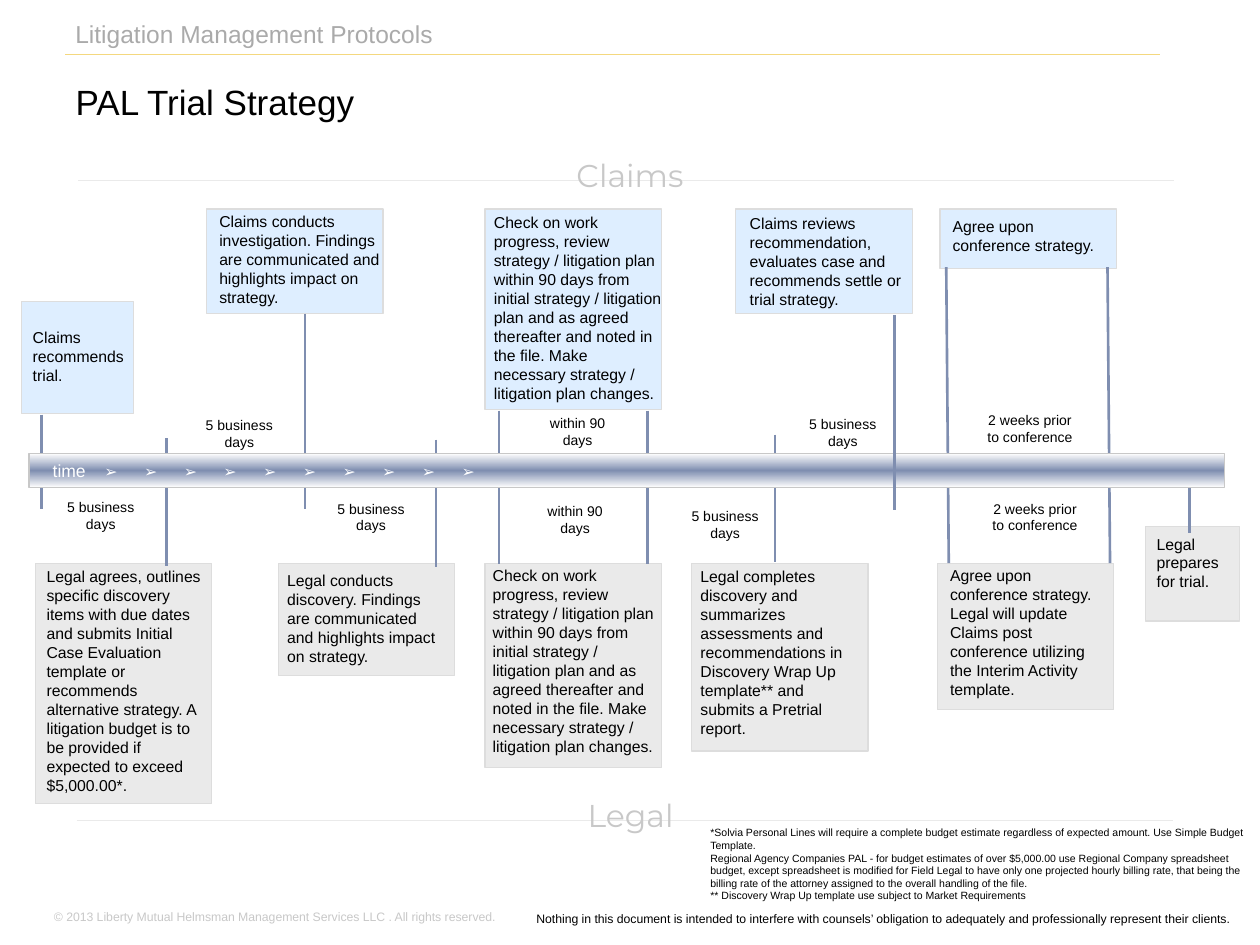
"""Build the PAL Trial Strategy timeline slide."""
from copy import deepcopy

from lxml.etree import SubElement
from pptx import Presentation
from pptx.dml.color import RGBColor
from pptx.enum.shapes import MSO_CONNECTOR, MSO_SHAPE
from pptx.enum.text import MSO_ANCHOR, PP_ALIGN
from pptx.oxml.ns import qn
from pptx.util import Inches, Pt

THEME = {
    "font": "Arial", "lane_font": "Montserrat",
    "black": "000000", "white": "FFFFFF", "header": "AAAAAA", "muted": "C8C8C8",
    "claims": "D1E8FF", "legal": "EAEAEA", "outline": "DDDDDD",
    "rule": "EAEAEA", "header_rule": "F4D87F", "time": "7F8EB0",
    "title_size": 20, "lane_size": 18, "header_size": 14, "time_size": 10,
    "card_size": 9, "label_size": 8, "footer_size": 7, "note_size": 6,
    "thin": 0.75, "thick": 1.5,
}
CARD_WIDTH, CLAIMS_TOP, LEGAL_TOP = 1.4, 1.66, 4.47

PROGRESS = ("Check on work progress, review strategy / litigation plan within 90 days from "
            "initial strategy / litigation plan and as agreed thereafter and noted in the file. "
            "Make necessary strategy / litigation plan changes.")
FINDINGS = "Findings are communicated and highlights impact on strategy."

# (lane, card left, top, width, height, text left, top, width, height, text)
CARDS = [
    ("claims", (0.17, 2.39, 0.89, 0.89), (0.26, 2.6, 0.78, 0.45), "Claims recommends trial."),
    ("legal", (0.28, LEGAL_TOP, CARD_WIDTH, 1.91), (0.37, 4.5, 1.26, 1.49),
     "Legal agrees, outlines specific discovery items with due dates and submits Initial Case "
     "Evaluation template or recommends alternative strategy. A litigation budget is to be "
     "provided if expected to exceed $5,000.00*."),
    ("claims", (1.64, CLAIMS_TOP, CARD_WIDTH, 0.83), (1.74, 1.68, 1.31, 0.75),
     "Claims conducts investigation. " + FINDINGS),
    ("legal", (2.21, LEGAL_TOP, CARD_WIDTH, 0.89), (2.28, 4.53, 1.27, 0.75),
     "Legal conducts discovery. " + FINDINGS),
    ("claims", (3.85, CLAIMS_TOP, CARD_WIDTH, 1.59), (3.92, 1.69, 1.33, 1.49), PROGRESS),
    ("legal", (3.85, LEGAL_TOP, CARD_WIDTH, 1.62), (3.91, 4.49, 1.31, 1.49), PROGRESS),
    ("legal", (5.49, LEGAL_TOP, CARD_WIDTH, 1.49), (5.56, 4.5, 1.23, 1.34),
     "Legal completes discovery and summarizes assessments and recommendations in Discovery "
     "Wrap Up template** and submits a Pretrial report."),
    ("claims", (5.84, CLAIMS_TOP, CARD_WIDTH, 0.83), (5.95, 1.7, 1.35, 0.75),
     "Claims reviews recommendation, evaluates case and recommends settle or trial strategy."),
    ("claims", (7.46, CLAIMS_TOP, CARD_WIDTH, 0.47), (7.56, 1.72, 1.22, 0.3),
     "Agree upon conference strategy."),
    ("legal", (7.44, LEGAL_TOP, CARD_WIDTH, 1.16), (7.54, 4.49, 1.25, 1.05),
     "Agree upon conference strategy. Legal will update Claims post conference utilizing the "
     "Interim Activity template."),
    ("legal", (9.09, 4.18, 0.75, 0.75), (9.18, 4.24, 0.65, 0.45),
     "Legal\nprepares\nfor trial."),
]
FIVE_DAYS, NINETY_DAYS = "5 business\ndays", "within 90\ndays"
TWO_WEEKS = "2 weeks prior\nto conference"
LABELS = [
    ((0.21, 3.91, 1.18, 0.37), FIVE_DAYS), ((1.47, 3.26, 0.86, 0.37), FIVE_DAYS),
    ((2.52, 3.92, 0.85, 0.37), FIVE_DAYS), ((4.14, 3.94, 0.85, 0.37), NINETY_DAYS),
    ((4.16, 3.24, 0.85, 0.37), NINETY_DAYS), ((5.33, 3.98, 0.85, 0.37), FIVE_DAYS),
    ((6.31, 3.25, 0.76, 0.37), FIVE_DAYS), ((7.68, 3.22, 0.99, 0.37), TWO_WEEKS),
    ((7.72, 3.92, 0.99, 0.37), TWO_WEEKS),
]
MARKERS = [
    (0.33, 3.29, 0.33, 4.04), (1.32, 3.48, 1.32, 4.49), (2.42, 2.49, 2.42, 4.04),
    (3.46, 3.49, 3.46, 4.5), (3.96, 3.26, 3.96, 4.48), (5.14, 3.26, 5.14, 4.48),
    (6.15, 3.45, 6.15, 4.46), (7.51, 2.12, 7.53, 4.47), (8.79, 2.12, 8.81, 4.47),
    (9.44, 3.76, 9.44, 4.23),
]
FRONT_MARKER = (7.1, 2.5, 7.1, 4.05)
RULES = [((0.52, 0.43, 9.21, 0.43), "header_rule"), ((0.61, 6.51, 9.31, 6.51), "rule"),
         ((0.62, 1.43, 9.32, 1.43), "rule")]
LANES = [((0.14, 6.27, 9.73, 0.4), "Legal"), ((0, 1.19, 10, 0.4), "Claims")]
NOTES = [
    "*Solvia Personal Lines will require a complete budget estimate regardless of expected "
    "amount. Use Simple Budget Template.",
    "Regional Agency Companies PAL - for budget estimates of over $5,000.00 use Regional Company "
    "spreadsheet budget, except spreadsheet is modified for Field Legal to have only one "
    "projected hourly billing rate, that being the billing rate of the attorney assigned to the "
    "overall handling of the file.",
    "** Discovery Wrap Up template use subject to Market Requirements",
]
HEADER = "Litigation Management Protocols"
DISCLAIMER = ("Nothing in this document is intended to interfere with counsels’ obligation to "
              "adequately and professionally represent their clients.")
COPYRIGHT = "© 2013 Liberty Mutual Helmsman Management Services LLC . All rights reserved."
ARROW_COUNT, FIRST_ARROW, ARROW_STEP = 10, 0.41, 0.315


def color(name):
    return RGBColor.from_string(THEME[name])


def add_run(paragraph, text, size, ink="black", font="font"):
    run = paragraph.add_run()
    run.text = text
    run.font.name, run.font.size = THEME[font], Pt(THEME[size])
    run.font.color.rgb = color(ink)


def write(paragraph, text, size, ink="black", font="font"):
    for index, line in enumerate(text.split("\n")):
        if index:
            paragraph.add_line_break()
        add_run(paragraph, line, size, ink, font)
    for line_break in paragraph._p.findall(qn("a:br")):
        SubElement(line_break, qn("a:rPr"), sz=str(THEME[size] * 100))


def add_text(slide, place, paragraphs, size, ink="black", font="font",
             align=PP_ALIGN.LEFT, anchor=MSO_ANCHOR.TOP, inset=True):
    frame = slide.shapes.add_textbox(*map(Inches, place)).text_frame
    frame.word_wrap, frame.vertical_anchor = True, anchor
    if not inset:
        frame.margin_left = frame.margin_right = frame.margin_top = frame.margin_bottom = 0
    for index, text in enumerate(paragraphs):
        paragraph = frame.add_paragraph() if index else frame.paragraphs[0]
        paragraph.alignment = align
        write(paragraph, text, size, ink, font)
    return frame


def add_line(slide, ends, ink, width):
    line = slide.shapes.add_connector(MSO_CONNECTOR.STRAIGHT, *map(Inches, ends))
    line.line.color.rgb, line.line.width = color(ink), Pt(THEME[width])
    SubElement(line._element.spPr, qn("a:effectLst"))


def add_rectangle(slide, place, outline):
    shape = slide.shapes.add_shape(MSO_SHAPE.RECTANGLE, *map(Inches, place))
    shape.shadow.inherit = False
    shape.line.color.rgb, shape.line.width = color(outline), Pt(THEME["thin"])
    return shape


def add_card(slide, lane, place, text_place, text):
    card = add_rectangle(slide, place, "outline")
    card.fill.solid()
    card.fill.fore_color.rgb = color(lane)
    if lane == "claims":
        fill_color = card._element.spPr.find(qn("a:solidFill"))[0]
        SubElement(fill_color, qn("a:alpha"), val="70000")
    add_text(slide, text_place, [text], "card_size", inset=False)


def add_time_bar(slide):
    bar = add_rectangle(slide, (0.23, 3.6, 9.49, 0.27), "muted")
    bar.fill.gradient()
    bar.fill.gradient_angle = 90
    stop_list = bar._element.spPr.find(".//" + qn("a:gsLst"))
    stop_list.append(deepcopy(stop_list[0]))
    for stop, position, ink in zip(bar.fill.gradient_stops, (0, 0.5, 1),
                                   ("white", "time", "white")):
        stop.position, stop.color.rgb = position, color(ink)
    frame = add_text(slide, (0.32, 3.6, 9.35, 0.27), ["time"], "time_size", "white")
    paragraph = frame.paragraphs[0]
    tabs = SubElement(paragraph._p.get_or_add_pPr(), qn("a:tabLst"))
    for index in range(ARROW_COUNT):
        position = Inches(FIRST_ARROW + index * ARROW_STEP)
        SubElement(tabs, qn("a:tab"), pos=str(position), algn="l")
    add_run(paragraph, "\t➢" * ARROW_COUNT, "card_size", "white")


def main():
    presentation = Presentation()
    presentation.slide_width, presentation.slide_height = Inches(10), Inches(7.5)
    slide = presentation.slides.add_slide(presentation.slide_layouts[5])

    title = slide.shapes.title
    title.left, title.top, title.width, title.height = map(Inches, (0.5, 0.55, 9, 0.47))
    title.text_frame.vertical_anchor = MSO_ANCHOR.BOTTOM
    title.text_frame.paragraphs[0].alignment = PP_ALIGN.LEFT
    write(title.text_frame.paragraphs[0], "PAL Trial Strategy", "title_size")

    for ends, ink in RULES:
        add_line(slide, ends, ink, "thin")
    add_text(slide, (0.5, 0.01, 7.17, 0.51), [HEADER], "header_size", "header",
             anchor=MSO_ANCHOR.MIDDLE)
    add_text(slide, (3, 7.18, 6.86, 0.22), [DISCLAIMER], "footer_size", align=PP_ALIGN.RIGHT)
    add_text(slide, (0.33, 7.17, 6.94, 0.22), [COPYRIGHT], "footer_size", "muted")
    for card in CARDS:
        add_card(slide, *card)
    for place, text in LABELS:
        add_text(slide, place, [text], "label_size", align=PP_ALIGN.CENTER)
    for ends in MARKERS:
        add_line(slide, ends, "time", "thick")
    add_time_bar(slide)
    add_line(slide, FRONT_MARKER, "time", "thick")
    for place, text in LANES:
        add_text(slide, place, [text], "lane_size", "muted", "lane_font", PP_ALIGN.CENTER)
    add_text(slide, (5.54, 6.51, 4.43, 0.7), NOTES, "note_size")
    presentation.save("out.pptx")


if __name__ == "__main__":
    main()
